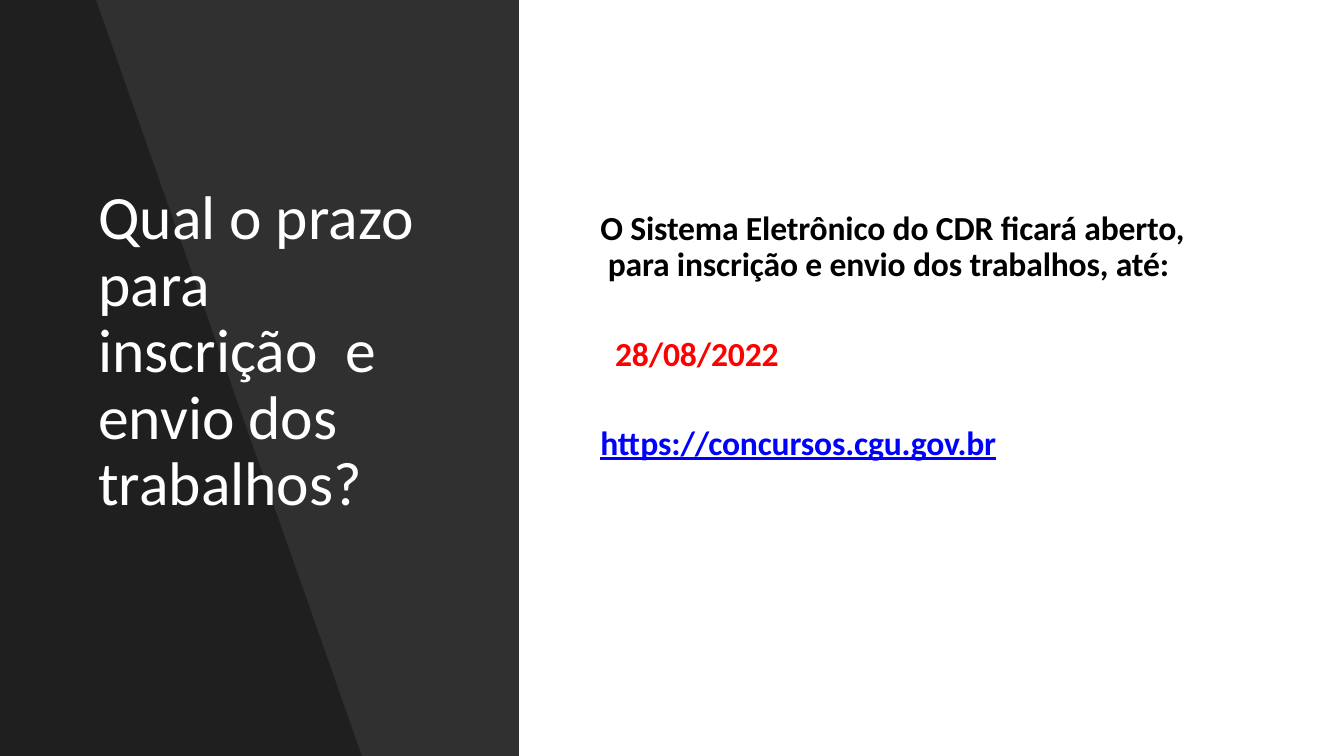
import dataclasses

import lxml.etree
import pptx
import pptx.dml.color
import pptx.enum.text
import pptx.oxml.ns
import pptx.util

Cm = pptx.util.Cm
Pt = pptx.util.Pt


@dataclasses.dataclass(frozen=True)
class Theme:
    font: str = "Calibri"
    black: str = "000000"
    white: str = "FFFFFF"
    red: str = "FF0000"
    link: str = "0000FF"
    title_size: int = 44
    body_size: int = 24


class SlideBuilder:
    def __init__(self, slide, theme):
        self.slide = slide
        self.theme = theme

    def panel(self, points, opacity):
        corners = [(Cm(x), Cm(y)) for x, y in points]
        builder = self.slide.shapes.build_freeform(*corners[0])
        builder.add_line_segments(corners[1:], close=True)
        shape = builder.convert_to_shape()
        shape.shadow.inherit = False
        shape.line.fill.background()
        shape.fill.solid()
        shape.fill.fore_color.rgb = pptx.dml.color.RGBColor.from_string(self.theme.black)
        color = shape.fill._xPr.find(".//" + pptx.oxml.ns.qn("a:srgbClr"))
        alpha = lxml.etree.SubElement(color, pptx.oxml.ns.qn("a:alpha"))
        alpha.set("val", str(opacity * 1000))

    def text(self, box, words, color, size, top_inset=0.03, tracking=-10,
             font_format=None, **paragraph_format):
        shape = self.slide.shapes.add_textbox(*map(Cm, box))
        frame = shape.text_frame
        frame_format = {
            "word_wrap": True,
            "auto_size": pptx.enum.text.MSO_AUTO_SIZE.NONE,
            "margin_left": 0,
            "margin_top": Cm(top_inset),
            "margin_right": 0,
            "margin_bottom": 0,
        }
        paragraph = frame.paragraphs[0]
        paragraph.text = words
        run_format = {"name": self.theme.font, "size": Pt(size), **(font_format or {})}
        targets = [(frame, frame_format), (paragraph, paragraph_format)]
        targets += [(run.font, run_format) for run in paragraph.runs]
        for target, values in targets:
            for name, value in values.items():
                setattr(target, name, value)
        for run in paragraph.runs:
            run.font.color.rgb = pptx.dml.color.RGBColor.from_string(color)
            run.font._element.set("spc", str(tracking))


def main():
    presentation = pptx.Presentation()
    presentation.slide_width = Cm(33.87)
    presentation.slide_height = Cm(19.05)
    theme = Theme()
    builder = SlideBuilder(presentation.slides.add_slide(presentation.slide_layouts[6]), theme)

    for top_right, bottom_right, opacity in [(13.08, 13.08, 81), (2.42, 9.12, 35)]:
        builder.panel([(top_right, 0), (0, 0), (0, 19.05), (bottom_right, 19.05)], opacity)

    builder.text(
        (2.48, 4.47, 8.61, 6.98),
        "Qual o prazo\vpara\vinscrição  e\venvio dos\vtrabalhos?",
        theme.white, theme.title_size, top_inset=0.23, tracking=0,
        line_spacing=0.9, space_before=Pt(6.5),
    )
    bold = {"bold": True}
    builder.text(
        (15.13, 5.16, 15.2, 2),
        "O Sistema Eletrônico do CDR ficará aberto,\v para inscrição e envio dos trabalhos, até:",
        theme.black, theme.body_size, top_inset=0.13, font_format=bold,
        line_spacing=Pt(26.3), space_before=Pt(4),
    )
    single_lines = [
        ((15.5, 8.36, 4.4, 1.09), "28/08/2022", theme.red, bold),
        ((15.13, 10.59, 10.4, 1.09), "https://concursos.cgu.gov.br", theme.link,
         {**bold, "underline": True}),
    ]
    for box, words, color, font_format in single_lines:
        builder.text(box, words, color, theme.body_size,
                     font_format=font_format, space_before=Pt(1))

    presentation.save("out.pptx")


if __name__ == "__main__":
    main()
